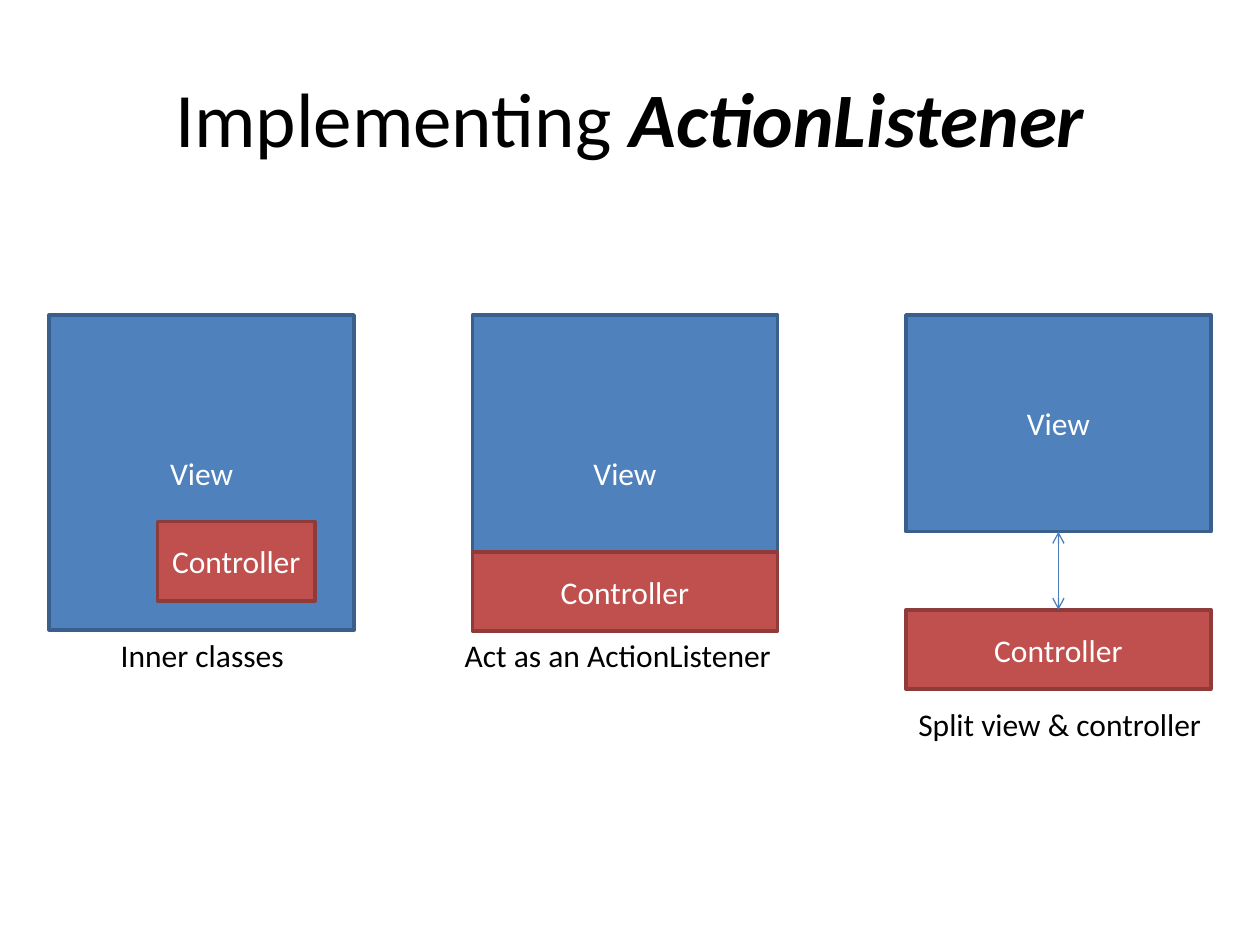
from pptx import Presentation
from pptx.dml.color import RGBColor
from pptx.enum.shapes import MSO_CONNECTOR as Connector, MSO_SHAPE as Shape
from pptx.enum.text import MSO_ANCHOR as Anchor, MSO_AUTO_SIZE as AutoSize, PP_ALIGN as Align
from pptx.oxml.ns import qn
from pptx.util import Inches, Pt
from lxml.etree import SubElement

VIEW = ("4F81BD", "3A5F8C")
CONTROLLER = ("C0504D", "8E3B39")


def rgb(value):
    return RGBColor.from_string(value)


class Diagram:
    """Holds the style and the current slide."""
    font_name = "Calibri"
    text_color = "000000"
    arrow_color = "4B7EBC"

    def __init__(self, slide):
        self.slide = slide

    def style(self, paragraph, size, color, align):
        paragraph.alignment = align
        font = paragraph.font
        font.name, font.size = self.font_name, Pt(size)
        font.color.rgb = rgb(color)

    def title(self, plain, emphasis):
        title = self.slide.shapes.title
        title.left, title.top = Inches(0.5), Inches(0.3)
        title.width, title.height = Inches(9), Inches(1.25)
        title.text_frame.vertical_anchor = Anchor.MIDDLE
        heading = title.text_frame.paragraphs[0]
        heading.add_run().text = plain
        strong = heading.add_run()
        strong.text = emphasis
        strong.font.bold = strong.font.italic = True
        self.style(heading, 44, self.text_color, Align.CENTER)

    def box(self, label, colors, left, top, width, height):
        box = self.slide.shapes.add_shape(
            Shape.RECTANGLE, Inches(left), Inches(top), Inches(width), Inches(height))
        fill, outline = colors
        box.shadow.inherit = False
        box.fill.solid()
        box.fill.fore_color.rgb = rgb(fill)
        box.line.color.rgb = rgb(outline)
        box.line.width = Pt(2)
        box.text_frame.vertical_anchor = Anchor.MIDDLE
        box.text_frame.text = label
        self.style(box.text_frame.paragraphs[0], 18, "FFFFFF", Align.CENTER)
        return box

    def caption(self, text, left, top, width):
        caption = self.slide.shapes.add_textbox(
            Inches(left), Inches(top), Inches(width), Inches(0.4))
        frame = caption.text_frame
        frame.word_wrap = False
        frame.auto_size = AutoSize.SHAPE_TO_FIT_TEXT
        frame.text = text
        self.style(frame.paragraphs[0], 18, self.text_color, Align.LEFT)

    def double_arrow(self, upper, lower):
        arrow = self.slide.shapes.add_connector(Connector.STRAIGHT, 0, 0, 0, 0)
        arrow.begin_connect(upper, 2)
        arrow.end_connect(lower, 0)
        arrow.line.color.rgb = rgb(self.arrow_color)
        arrow.line.width = Pt(0.75)
        line = arrow.line._get_or_add_ln()
        for end in ("a:headEnd", "a:tailEnd"):
            SubElement(line, qn(end), type="arrow")
        SubElement(arrow._element.spPr, qn("a:effectLst"))


def main():
    presentation = Presentation()
    presentation.slide_width, presentation.slide_height = Inches(10), Inches(7.5)
    title_only = presentation.slide_layouts[5]
    diagram = Diagram(presentation.slides.add_slide(title_only))
    diagram.title("Implementing ", "ActionListener")

    top, width, bar = 2.5, 2.42, 0.63
    inner, acting, split = 0.39, 3.75, 7.19

    # Controller nested inside the view
    diagram.box("View", VIEW, inner, top, width, 2.5)
    diagram.box("Controller", CONTROLLER, 1.25, 4.14, 1.25, bar)
    diagram.caption("Inner classes", 0.86, 5, 1.51)

    # View that is its own controller
    diagram.box("View", VIEW, acting, top, width, 2.5)
    diagram.box("Controller", CONTROLLER, acting, 4.38, width, bar)
    diagram.caption("Act as an ActionListener", 3.59, 5, 2.66)

    # View and controller apart, linked both ways
    view = diagram.box("View", VIEW, split, top, width, 1.72)
    controller = diagram.box("Controller", CONTROLLER, split, 4.84, width, bar)
    diagram.double_arrow(view, controller)
    diagram.caption("Split view & controller", split, 5.55, 2.47)

    presentation.save("out.pptx")


if __name__ == "__main__":
    main()
